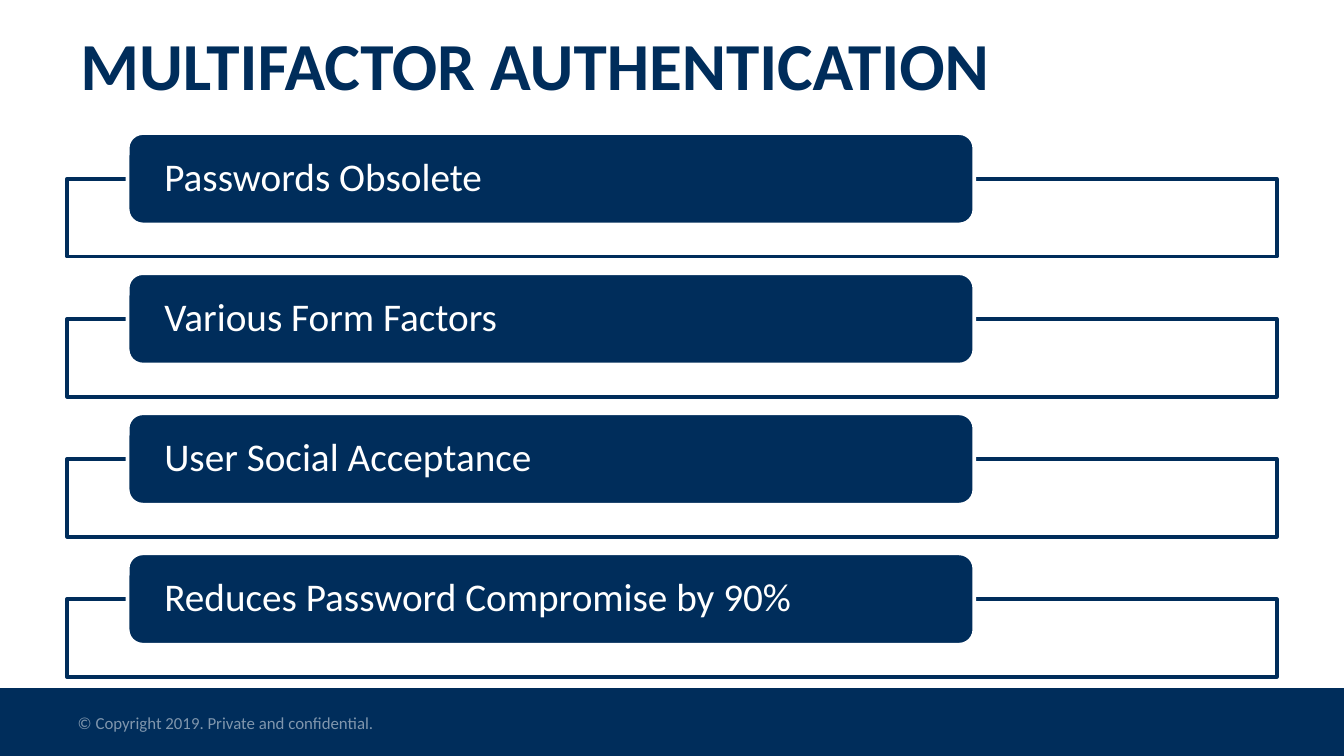
from pptx import Presentation
from pptx.dml.color import RGBColor
from pptx.enum.shapes import MSO_SHAPE
from pptx.enum.text import MSO_ANCHOR, PP_ALIGN
from pptx.util import Pt

PX = 2286  # EMU per px, 400 px to the inch
NAVY, WHITE, MUTED = "002D5B", "FFFFFF", "8096AD"


def add_block(kind, left, top, width, height, fill, line=None):
    block = slide.shapes.add_shape(kind, left * PX, top * PX, width * PX, height * PX)
    block.shadow.inherit = False
    block.fill.solid()
    block.fill.fore_color.rgb = RGBColor.from_string(fill)
    if line:
        block.line.color.rgb = RGBColor.from_string(line)
        block.line.width = Pt(2)
    else:
        block.line.fill.background()
    return block


def write(shape, text, size, color, bold=False, spacing=1.0):
    frame = shape.text_frame
    frame.word_wrap = True
    frame.vertical_anchor = MSO_ANCHOR.MIDDLE
    paragraph = frame.paragraphs[0]
    paragraph.alignment = PP_ALIGN.LEFT
    paragraph.line_spacing = spacing
    run = paragraph.add_run()
    run.text = text
    run.font.name = "Calibri"
    run.font.size = Pt(size)
    run.font.bold = bold
    run.font.color.rgb = RGBColor.from_string(color)


prs = Presentation()
prs.slide_width, prs.slide_height = 4000 * PX, 2250 * PX
slide = prs.slides.add_slide(prs.slide_layouts[6])

# Footer
add_block(MSO_SHAPE.RECTANGLE, 0, 2048, 4000, 202, NAVY)
copyright_note = slide.shapes.add_textbox(192 * PX, 2102 * PX, 1352 * PX, 100 * PX)
write(copyright_note, "© Copyright 2019. Private and confidential.", 9, MUTED)

# Points: each label overlaps the top edge of its outlined frame
points = [
    "Passwords Obsolete",
    "Various Form Factors",
    "User Social Acceptance",
    "Reduces Password Compromise by 90%",
]
for index, point in enumerate(points):
    top = 396 + 417 * index
    add_block(MSO_SHAPE.RECTANGLE, 200, top + 136, 3600, 232, WHITE, NAVY)
    label = add_block(MSO_SHAPE.ROUNDED_RECTANGLE, 380, top, 2520, 272, NAVY, WHITE)
    label.text_frame.margin_left = label.text_frame.margin_right = 96 * PX
    label.text_frame.margin_top = label.text_frame.margin_bottom = 0
    write(label, point, 21, WHITE, spacing=0.9)

# Title
title = slide.shapes.add_textbox(200 * PX, 60 * PX, 3600 * PX, 304 * PX)
write(title, "MULTIFACTOR AUTHENTICATION", 36, NAVY, bold=True, spacing=0.8)

prs.save("out.pptx")
